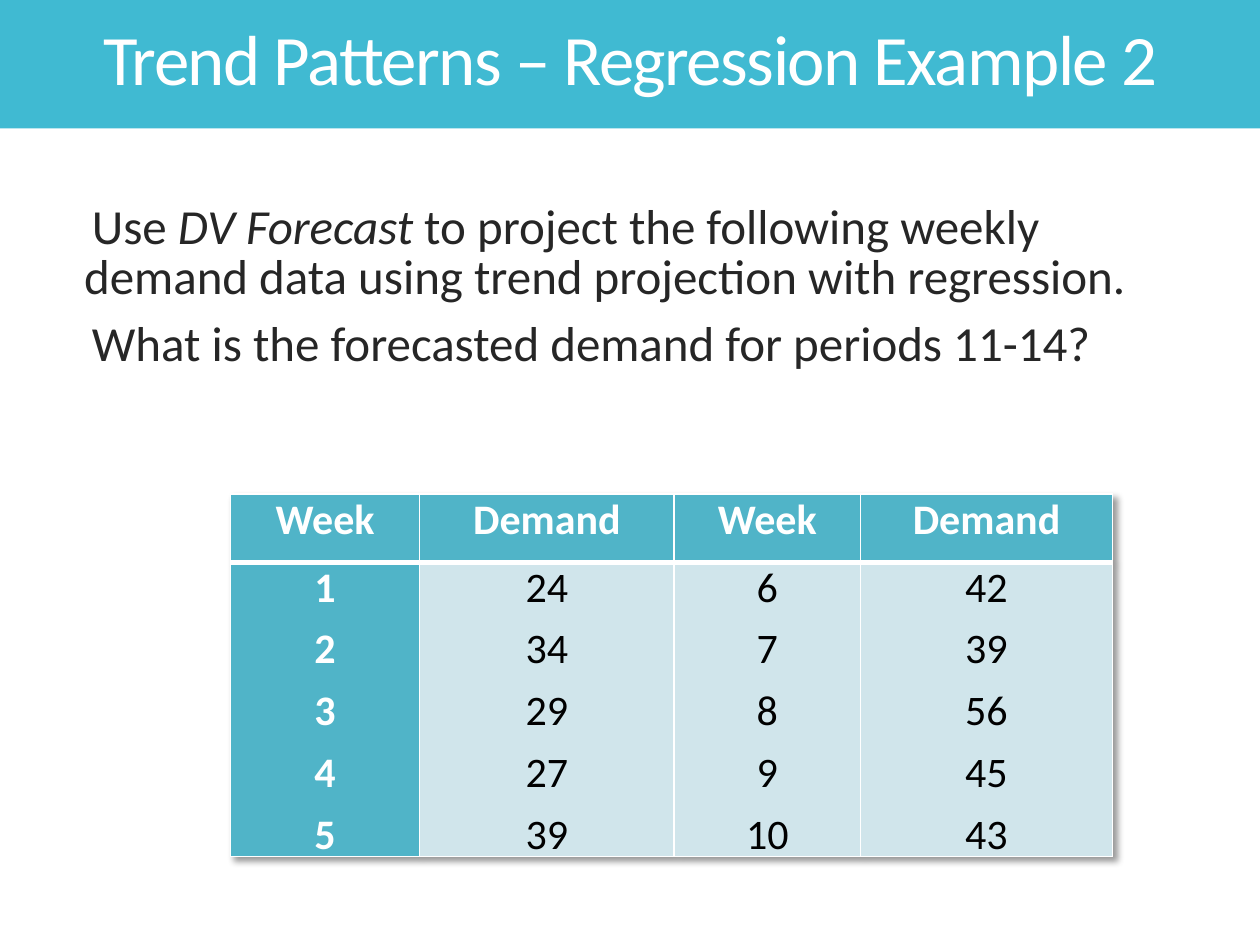
from dataclasses import dataclass

from lxml.etree import SubElement as Sub
from pptx import Presentation
from pptx.dml.color import RGBColor as RGB
from pptx.enum.text import MSO_ANCHOR as Anchor, MSO_AUTO_SIZE as Fit, PP_ALIGN as Align
from pptx.oxml.ns import qn
from pptx.util import Emu, Inches, Pt


@dataclass(frozen=True)
class Theme:
    font: str = "Calibri"
    band: str = "40BAD2"
    head: str = "50B4C8"
    cell: str = "D0E5EB"
    white: str = "FFFFFF"
    black: str = "000000"
    text: str = "262626"
    mark: str = "162F33"
    title: float = 40.5
    body: float = 28
    table: float = 24


THEME = Theme()
WIDE, HIGH = Inches(10), Inches(7.5)
TITLE = "Trend Patterns – Regression Example 2"
# Each paragraph is a list of (text, italic) runs.
BODY = [
    [("Use ", False), ("DV Forecast", True),
     (" to project the following weekly demand data using trend projection with regression.", False)],
    [("What is the forecasted demand for periods 11-14?", False)],
]
DEMAND = [24, 34, 29, 27, 39, 42, 39, 56, 45, 43]
COLS = (1.5, 2.02, 1.48, 2)
ROWS = (0.54, 2.33)


def share(x, y, w, h):
    """Turn shares of the slide's size into lengths."""
    return Emu(int(x * WIDE)), Emu(int(y * HIGH)), Emu(int(w * WIDE)), Emu(int(h * HIGH))


def style(run, size, color, bold=False, italic=False):
    font = run.font
    font.name, font.size = THEME.font, Pt(size)
    font.bold, font.italic = bold, italic
    font.color.rgb = RGB.from_string(color)


def paint(item, color):
    item.fill.solid()
    item.fill.fore_color.rgb = RGB.from_string(color)


def add_title(slide):
    title = slide.shapes.title
    title.left, title.top, title.width, title.height = share(0, 0, 1, 0.136)
    paint(title, THEME.band)
    frame = title.text_frame
    frame.text = TITLE
    frame.auto_size = Fit.NONE
    frame.vertical_anchor = Anchor.MIDDLE
    para = frame.paragraphs[0]
    para.alignment, para.line_spacing = Align.CENTER, 0.85
    run = para.runs[0]
    style(run, THEME.title, THEME.white)
    run.font._element.set("spc", "-90")


def set_mark(para):
    """Give the paragraph a blank bullet on a small hanging indent."""
    props = para._p.get_or_add_pPr()
    indent = Inches(0.07)
    props.set("marL", str(indent))
    props.set("indent", str(-indent))
    color = Sub(props, qn("a:buClr"))
    Sub(color, qn("a:srgbClr"), val=THEME.mark)
    Sub(props, qn("a:buSzPct"), val="150000")
    Sub(props, qn("a:buFont"), typeface=THEME.font)
    Sub(props, qn("a:buChar"), char=" ")


def add_body(slide):
    frame = slide.shapes.add_textbox(*share(0.05, 0.21, 0.9, 0.66)).text_frame
    frame.word_wrap = True
    for row, parts in enumerate(BODY):
        para = frame.add_paragraph() if row else frame.paragraphs[0]
        para.line_spacing, para.space_before = 0.85, Pt(9.8)
        set_mark(para)
        for text, italic in parts:
            run = para.add_run()
            run.text = text
            style(run, THEME.body, THEME.text, italic=italic)


def set_lines(cell, **widths):
    """Draw white cell borders of the given widths in points."""
    props = cell._tc.get_or_add_tcPr()
    for row, side in enumerate(("lnL", "lnR", "lnT", "lnB")):
        line = Sub(props, qn(f"a:{side}"), w=str(Pt(widths.get(side, 1))))
        Sub(Sub(line, qn("a:solidFill")), qn("a:srgbClr"), val=THEME.white)
        props.insert(row, line)


def fill_cell(cell, text, back, color, bold):
    cell.margin_left = cell.margin_right = Inches(0.07)
    cell.margin_top = cell.margin_bottom = 0
    paint(cell, back)
    cell.text_frame.text = text
    for para in cell.text_frame.paragraphs:
        para.alignment, para.space_after = Align.CENTER, Pt(6)
        style(para.runs[0], THEME.table, color, bold)


def add_shadow(table):
    props = table._tbl.tblPr
    effects = Sub(props, qn("a:effectLst"))
    props.insert(0, effects)
    shadow = Sub(effects, qn("a:outerShdw"), blurRad=str(Pt(4)), dist=str(Pt(3)),
                 dir="2700000", algn="tl", rotWithShape="0")
    color = Sub(shadow, qn("a:srgbClr"), val=THEME.black)
    Sub(color, qn("a:alpha"), val="40000")


def add_table(slide):
    place = share(0.183, 0.523, 0.7, 0.383)
    table = slide.shapes.add_table(len(ROWS), len(COLS), *place).table
    for row, high in zip(table.rows, ROWS):
        row.height = Inches(high)
    half = len(DEMAND) // 2
    weeks = range(1, len(DEMAND) + 1)
    lists = (weeks[:half], DEMAND[:half], weeks[half:], DEMAND[half:])
    for col, (wide, values) in enumerate(zip(COLS, lists)):
        table.columns[col].width = Inches(wide)
        head, body = table.cell(0, col), table.cell(1, col)
        strong = (THEME.head, THEME.white, True)
        plain = (THEME.cell, THEME.black, False)
        fill_cell(head, "Demand" if col % 2 else "Week", *strong)
        fill_cell(body, "\n".join(map(str, values)), *(plain if col else strong))
        set_lines(head, lnB=3)
        set_lines(body, lnT=3)
    add_shadow(table)


def main():
    deck = Presentation()
    deck.slide_width, deck.slide_height = WIDE, HIGH
    slide = deck.slides.add_slide(deck.slide_layouts[5])
    add_title(slide)
    add_body(slide)
    add_table(slide)
    deck.save("out.pptx")


if __name__ == "__main__":
    main()
